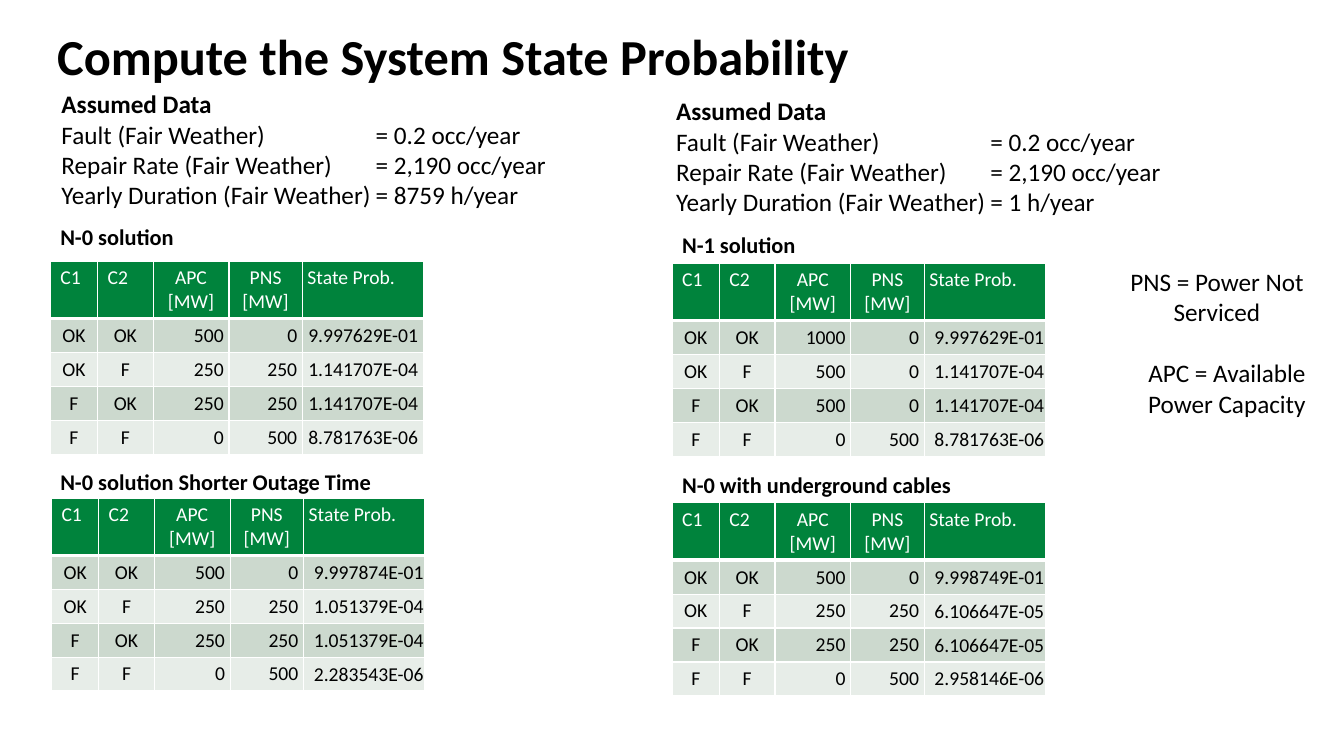
from lxml import etree
from pptx import Presentation
from pptx.dml.color import RGBColor
from pptx.enum.text import MSO_ANCHOR, PP_ALIGN
from pptx.oxml.ns import qn
from pptx.util import Cm, Pt

LEFT, CENTER, RIGHT = PP_ALIGN.LEFT, PP_ALIGN.CENTER, PP_ALIGN.RIGHT
TOP, MIDDLE = MSO_ANCHOR.TOP, MSO_ANCHOR.MIDDLE
BLACK = RGBColor(0x00, 0x00, 0x00)
WHITE = RGBColor(0xFF, 0xFF, 0xFF)
GREEN = RGBColor(0x00, 0x83, 0x3C)
BANDS = [RGBColor(0xE7, 0xED, 0xE8), RGBColor(0xCC, 0xD9, 0xCE)]

TITLE = {"size": Pt(36), "bold": True}
LABEL = {"size": Pt(16), "bold": True}
HEAD = {"size": Pt(18), "bold": True}
BODY = {"size": Pt(18), "bold": False}
CELL = {"size": Pt(14), "bold": False}

WIDE = {"margin_left": Cm(0.25), "margin_top": Cm(0.13),
        "margin_right": Cm(0.25), "margin_bottom": Cm(0.13)}
SNUG = {side: Cm(0.13) for side in WIDE}
TIGHT = {**{side: Cm(0.02) for side in WIDE}, "margin_bottom": 0}

WIDTHS = [1.19, 1.4, 1.91, 1.85, 3.05]
HEIGHTS = [1.4] + [0.85] * 4
TITLES = ["C1", "C2", "APC [MW]", "PNS\n[MW]", "State Prob."]
TITLE_ALIGNS = [LEFT, LEFT, CENTER, CENTER, LEFT]
ALIGNS = [CENTER, CENTER, RIGHT, RIGHT, RIGHT]
STATES = [("OK", "OK"), ("OK", "F"), ("F", "OK"), ("F", "F")]
LOSS = ["0", "250", "250", "500"]
HALF = ["500", "250", "250", "0"]

CASES = [
    ("N-0 solution", 1.27, 5.51, 1.27, 6.58, HALF, LOSS,
     ["9.997629E-01", "1.141707E-04", "1.141707E-04", "8.781763E-06"], SNUG),
    ("N-1 solution", 16.94, 5.69, 16.94, 6.63,
     ["1000", "500", "500", "0"], ["0", "0", "0", "500"],
     ["9.997629E-01", "1.141707E-04", "1.141707E-04", "8.781763E-06"], TIGHT),
    ("N-0 solution Shorter Outage Time", 1.27, 11.66, 1.3, 12.55, HALF, LOSS,
     ["9.997874E-01", "1.051379E-04", "1.051379E-04", "2.283543E-06"], TIGHT),
    ("N-0 with underground cables", 16.94, 11.76, 16.94, 12.67, HALF, LOSS,
     ["9.998749E-01", "6.106647E-05", "6.106647E-05", "2.958146E-06"], TIGHT),
]


def apply(item, form):
    for key, value in form.items():
        setattr(item, key, value)


def write(par, text, form, color=BLACK, align=LEFT):
    par.alignment = align
    run = par.add_run()
    run.text = text
    run.font.name = "Calibri"
    run.font.color.rgb = color
    apply(run.font, form)


def add_box(slide, place, lines, align=LEFT, tab=None):
    frame = slide.shapes.add_textbox(*map(Cm, place)).text_frame
    frame.word_wrap = True
    for i, (text, form) in enumerate(lines):
        par = frame.add_paragraph() if i else frame.paragraphs[0]
        if tab:
            stops = etree.SubElement(par._p.get_or_add_pPr(), qn("a:tabLst"))
            etree.SubElement(stops, qn("a:tab"), pos=str(Cm(tab)), algn="l")
        write(par, text, form, align=align)


def add_data(slide, left, top, hours):
    lines = [("Assumed Data", HEAD),
             ("Fault (Fair Weather)\t= 0.2 occ/year", BODY),
             ("Repair Rate (Fair Weather)\t= 2,190 occ/year", BODY),
             (f"Yearly Duration (Fair Weather)\t= {hours} h/year", BODY)]
    add_box(slide, (left, top, 12.85, 3.33), lines, tab=7.92)


def add_edge(cell, side, width):
    line = etree.SubElement(cell._tc.get_or_add_tcPr(), qn("a:ln" + side),
                            w=str(Pt(width)))
    fill = etree.SubElement(line, qn("a:solidFill"))
    etree.SubElement(fill, qn("a:srgbClr"), val=str(WHITE))


def fill_cell(cell, text, fill, color, align, inset, low):
    for side in "LRT":
        add_edge(cell, side, 1)
    add_edge(cell, "B", low)
    cell.fill.solid()
    cell.fill.fore_color.rgb = fill
    apply(cell, inset)
    cell.vertical_anchor = MIDDLE if inset is TIGHT else TOP
    frame = cell.text_frame
    for i, part in enumerate(text.split("\n")):
        par = frame.add_paragraph() if i else frame.paragraphs[0]
        write(par, part, CELL, color, align)


def add_grid(slide, left, top, rows, inset):
    place = map(Cm, (left, top, sum(WIDTHS), sum(HEIGHTS)))
    grid = slide.shapes.add_table(len(HEIGHTS), len(WIDTHS), *place).table
    for col, width in zip(grid.columns, WIDTHS):
        col.width = Cm(width)
    for row, height in zip(grid.rows, HEIGHTS):
        row.height = Cm(height)
    for c, text in enumerate(TITLES):
        room = SNUG if c == 4 else WIDE
        fill_cell(grid.cell(0, c), text, GREEN, WHITE, TITLE_ALIGNS[c], room, 3)
    for r, row in enumerate(rows, 1):
        for c, text in enumerate(row):
            room = inset if c == 4 else SNUG
            fill_cell(grid.cell(r, c), text, BANDS[r % 2], BLACK, ALIGNS[c],
                      room, 1)
            if r == 1:
                top_line = grid.cell(r, c)._tc.tcPr.find(qn("a:lnT"))
                top_line.set("w", str(Pt(3)))


def main():
    deck = Presentation()
    deck.slide_width, deck.slide_height = Cm(33.87), Cm(19.05)
    slide = deck.slides.add_slide(deck.slide_layouts[6])
    add_box(slide, (1.19, 0.51, 29.21, 1.85),
            [("Compute the System State Probability", TITLE)])
    add_data(slide, 1.3, 2.11, "8759")
    add_data(slide, 16.79, 2.29, "1")
    for name, x, y, left, top, power, loss, odds, inset in CASES:
        add_box(slide, (x, y, 11.91, 0.94), [(name, LABEL)])
        rows = [(*state, *rest)
                for state, *rest in zip(STATES, power, loss, odds)]
        add_grid(slide, left, top, rows, inset)
    add_box(slide, (27.94, 6.58, 5.46, 1.8),
            [("PNS = Power Not Serviced", BODY)], CENTER)
    add_box(slide, (28.19, 8.89, 5.46, 1.8),
            [("APC = Available Power Capacity", BODY)], CENTER)
    deck.save("out.pptx")


if __name__ == "__main__":
    main()
